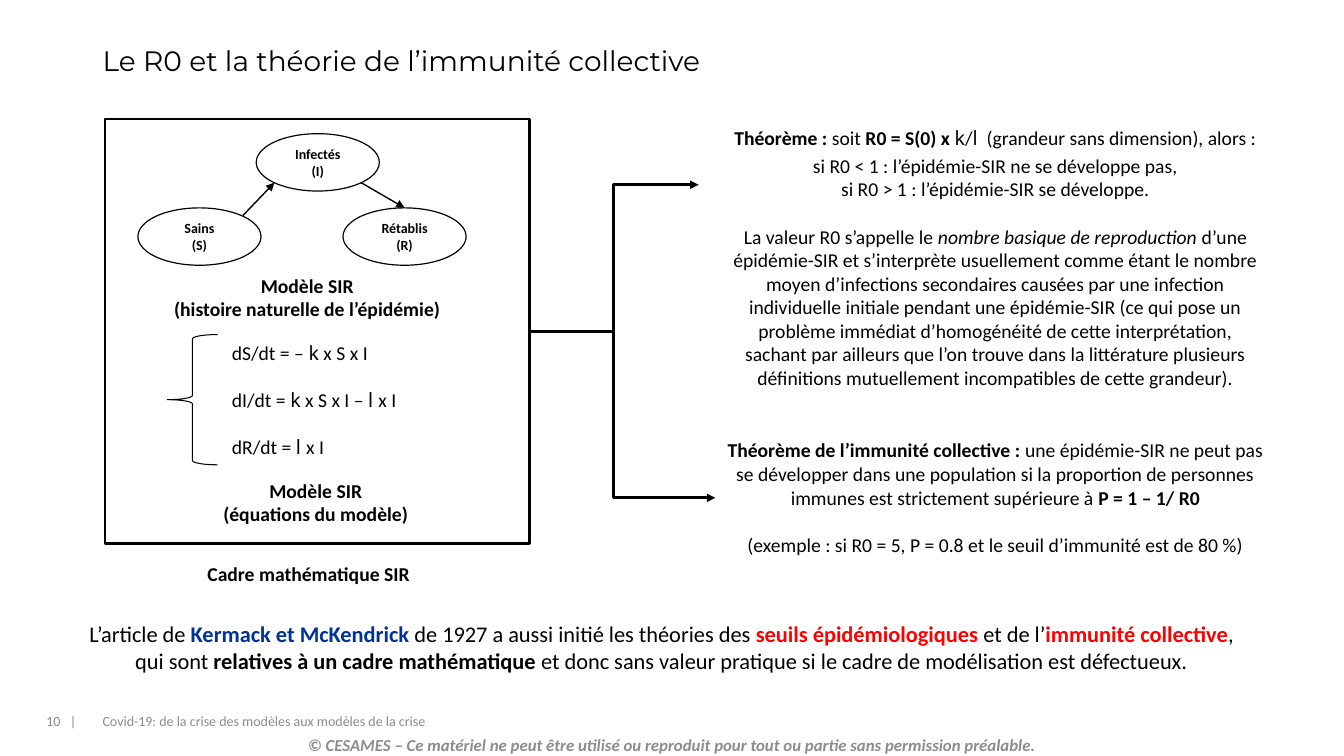
from dataclasses import dataclass

from lxml.etree import SubElement
from pptx import Presentation
from pptx.dml.color import RGBColor
from pptx.enum.shapes import MSO_CONNECTOR, MSO_SHAPE
from pptx.enum.text import MSO_ANCHOR, PP_ALIGN
from pptx.oxml.ns import qn
from pptx.util import Pt


@dataclass(frozen=True)
class Theme:
    black: RGBColor = RGBColor(0, 0, 0)
    gray: RGBColor = RGBColor(0x8C, 0x8C, 0x8C)
    page_gray: RGBColor = RGBColor(0x89, 0x89, 0x89)
    blue: RGBColor = RGBColor(0, 0x33, 0x99)
    red: RGBColor = RGBColor(0xFF, 0, 0)
    body_font: str = "Calibri"
    title_font: str = "Montserrat"
    symbol_font: str = "Noto Sans"
    title: int = 20
    conclusion: int = 16
    body: int = 14
    notice: int = 12
    small: int = 10
    blank_line: int = 17
    frame_line: float = 2
    arrow_line: float = 1
    oval_line: float = 0.85
    brace_line: float = 0.75


T = Theme()


def run(text, bold=False, italic=False, font=T.body_font, color=T.black):
    return text, bold, italic, font, color


def bold(text, color=T.black):
    return run(text, bold=True, color=color)


def symbol(text):
    return run(text, font=T.symbol_font)


def para(*runs, before=0, after=0, spacing=None):
    return runs, before, after, spacing


def write(tf, paras, size, align, anchor):
    tf.word_wrap = True
    tf.vertical_anchor = anchor
    for i, (runs, before, after, spacing) in enumerate(paras):
        p = tf.add_paragraph() if i else tf.paragraphs[0]
        p.alignment = align
        p.space_before, p.space_after = Pt(before), Pt(after)
        if spacing:
            p.line_spacing = spacing
        for text, is_bold, italic, font, color in runs:
            r = p.add_run()
            r.text = text
            r.font.name, r.font.size = font, Pt(size)
            r.font.bold, r.font.italic = is_bold, italic
            r.font.color.rgb = color


def add_text(s, box, paras, size=T.body, align=PP_ALIGN.CENTER, anchor=MSO_ANCHOR.TOP):
    sp = s.shapes.add_textbox(*map(Pt, box))
    write(sp.text_frame, paras, size, align, anchor)
    return sp


def add_outline(s, kind, box, width):
    sp = s.shapes.add_shape(kind, *map(Pt, box))
    sp.shadow.inherit = False
    sp.fill.background()
    sp.line.color.rgb = T.black
    sp.line.width = Pt(width)
    return sp


def add_state(s, x, y, name, letter):
    sp = add_outline(s, MSO_SHAPE.OVAL, (x, y, 88, 41), T.oval_line)
    tf = sp.text_frame
    tf.margin_left = tf.margin_right = tf.margin_top = tf.margin_bottom = 0
    write(tf, [para(bold(name)), para(bold(f"({letter})"))],
          T.small, PP_ALIGN.CENTER, MSO_ANCHOR.MIDDLE)
    return sp


def add_arrow(s, kind, start, end, width, bend=None):
    c = s.shapes.add_connector(kind, *map(Pt, start + end))
    c.line.color.rgb = T.black
    c.line.width = Pt(width)
    SubElement(c.line._get_or_add_ln(), qn("a:tailEnd"), type="triangle")
    spPr = c._element.spPr
    SubElement(spPr, qn("a:effectLst"))
    if bend:
        guides = spPr.find(qn("a:prstGeom")).get_or_add_avLst()
        SubElement(guides, qn("a:gd"), name="adj1", fmla=f"val {bend}")
    return c


def add_model(s):
    frame = add_outline(s, MSO_SHAPE.RECTANGLE, (75, 85, 303, 303), T.frame_line)
    add_text(s, (158.5, 239.8, 136, 92), [
        para(run("dS/dt = – "), symbol("k"), run(" x S x I")),
        para(run("dI/dt = "), symbol("k"), run(" x S x I – "), symbol("l "), run("x I"),
             before=T.blank_line),
        para(run("dR/dt = "), symbol("l "), run("x I"), before=T.blank_line),
    ], align=PP_ALIGN.LEFT)
    add_outline(s, MSO_SHAPE.LEFT_BRACE, (119.5, 239, 36, 93), T.brace_line)
    add_state(s, 98.5, 148.5, "Sains", "S")
    add_state(s, 183, 95.5, "Infectés", "I")
    recovered = add_state(s, 245, 148.5, "Rétablis", "R")
    add_arrow(s, MSO_CONNECTOR.STRAIGHT, (173.5, 154), (196, 130.5), T.arrow_line)
    c = add_arrow(s, MSO_CONNECTOR.STRAIGHT, (258, 130.5), (289, 148.5), T.arrow_line)
    c.end_connect(recovered, 0)
    for box, detail in [((106, 192, 227, 33), "(histoire naturelle de l’épidémie)"),
                        ((139, 338.5, 173, 33), "(équations du modèle)")]:
        add_text(s, box, [para(bold("Modèle SIR")), para(bold(detail))])
    add_text(s, (134, 398, 173, 24), [para(bold("Cadre mathématique SIR"))])
    return frame


def add_theorems(s, frame):
    add_text(s, (511, 86.4, 400, 197), [
        para(bold("Théorème :"), run(" soit "), bold("R0 = S(0) x "), symbol("k"), run("/"),
             symbol("l"), run("  (grandeur sans dimension), alors :"), after=3),
        para(run("si R0 < 1 : l’épidémie-SIR ne se développe pas,")),
        para(run("si R0 > 1 : l’épidémie-SIR se développe.")),
        para(run("La valeur R0 s’appelle le "),
             run("nombre basique de reproduction", italic=True),
             run(" d’une épidémie-SIR et s’interprète usuellement comme étant le nombre moyen "
                 "d’infections secondaires causées par une infection individuelle initiale "
                 "pendant une épidémie-SIR (ce qui pose un problème immédiat d’homogénéité de "
                 "cette interprétation, sachant par ailleurs que l’on trouve dans la "
                 "littérature plusieurs définitions mutuellement incompatibles de cette "
                 "grandeur)."),
             before=T.blank_line),
    ])
    immunity = add_text(s, (511, 309.6, 400, 92), [
        para(bold("Théorème de l’immunité collective : "),
             run("une épidémie-SIR ne peut pas se développer dans une population si la "
                 "proportion de personnes immunes est strictement supérieure à "),
             bold("P = 1 – 1/ R0")),
        para(run("(exemple : si R0 = 5, P = 0.8 et le seuil d’immunité est de 80 %)"),
             before=T.blank_line),
    ])
    start = (378, 236.5)
    up = add_arrow(s, MSO_CONNECTOR.ELBOW, start, (499, 132), T.frame_line, 50000)
    down = add_arrow(s, MSO_CONNECTOR.ELBOW, start, (511, 355.6), T.frame_line, 45100)
    for c in (up, down):
        c.begin_connect(frame, 3)
    down.end_connect(immunity, 1)


def add_conclusion(s):
    add_text(s, (52.5, 439.2, 840, 46), [para(
        run("L’article de "), bold("Kermack et McKendrick", T.blue),
        run(" de 1927 a aussi initié les théories des "),
        bold("seuils épidémiologiques ", T.red), run("et de l’"),
        bold("immunité collective", T.red), run(", qui sont "),
        bold("relatives à un cadre mathématique "),
        run("et donc sans valeur pratique si le cadre de modélisation est défectueux."),
    )], T.conclusion)


def add_page_texts(s):
    left, middle = PP_ALIGN.LEFT, MSO_ANCHOR.MIDDLE
    add_text(s, (0, 521.3, 960, 21.6), [para(run(
        "© CESAMES –\u00a0Ce matériel ne peut être utilisé ou reproduit pour tout ou partie "
        "sans permission préalable.", bold=True, italic=True, color=T.gray))],
        T.notice, anchor=middle)
    add_text(s, (66.2, 28.8, 887, 31), [para(run(
        "Le R0 et la théorie de l’immunité collective", font=T.title_font), spacing=0.9)],
        T.title, left, middle)
    add_text(s, (66.2, 500.4, 579, 28.8), [para(run(
        "Covid-19: de la crise des modèles aux modèles de la crise", color=T.gray))],
        T.small, left, middle)
    add_text(s, (26, 500.4, 48, 28.8), [para(run("10   |", color=T.page_gray))],
             T.small, left, middle)


def main():
    prs = Presentation()
    prs.slide_width, prs.slide_height = Pt(960), Pt(540)
    s = prs.slides.add_slide(prs.slide_layouts[6])
    add_page_texts(s)
    frame = add_model(s)
    add_theorems(s, frame)
    add_conclusion(s)
    prs.save("out.pptx")


if __name__ == "__main__":
    main()
